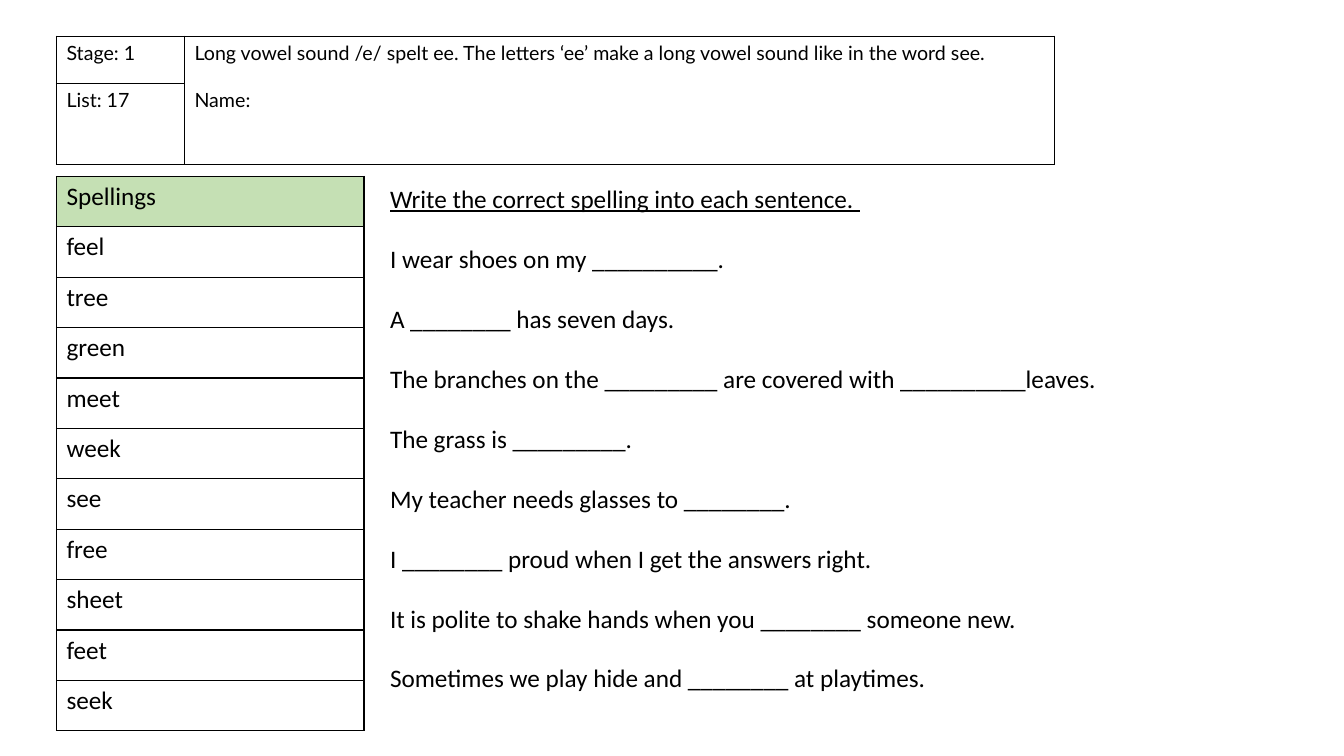
from dataclasses import dataclass

from lxml import etree
from pptx import Presentation
from pptx.dml.color import RGBColor
from pptx.enum.text import MSO_AUTO_SIZE
from pptx.oxml import parse_xml
from pptx.oxml.ns import nsdecls
from pptx.slide import Slide
from pptx.table import Table, _Cell
from pptx.text.text import TextFrame
from pptx.util import Inches, Pt


@dataclass(frozen=True)
class Style:
    font: str
    size: float
    gap: float  # points between paragraphs


@dataclass(frozen=True)
class Theme:
    ink: str = "000000"
    green: str = "C5E0B4"
    rule: int = 12700
    head: Style = Style("Lato", 14, 16.8)
    body: Style = Style("Calibri", 18, 21.2)


@dataclass(frozen=True)
class Grid:
    left: float
    top: float
    cols: tuple[float, ...]
    row: float
    cells: tuple[tuple[tuple[str, ...], ...], ...]
    style: Style


THEME = Theme()

HEAD = Grid(
    0.56, 0.36, (1.27, 8.63), 0.47,
    (
        (
            ("Stage: 1",),
            (
                "Long vowel sound /e/ spelt ee. The letters ‘ee’ make a "
                "long vowel sound like in the word see.",
                "Name:",
            ),
        ),
        (("List: 17",), ()),
    ),
    THEME.head,
)

WORDS = ("Spellings", "feel", "tree", "green", "meet", "week", "see",
         "free", "sheet", "feet", "seek")
LIST = Grid(0.56, 1.75, (3.05,), 0.5,
            tuple(((word,),) for word in WORDS), THEME.body)

TASK = (
    "Write the correct spelling into each sentence. ",
    "I wear shoes on my __________.",
    "A ________ has seven days.",
    "The branches on the _________ are covered with __________leaves.",
    "The grass is _________.",
    "My teacher needs glasses to ________.",
    "I ________ proud when I get the answers right.",
    "It is polite to shake hands when you ________ someone new.",
    "Sometimes we play hide and ________ at playtimes.",
)


def write(frame: TextFrame, lines: tuple[str, ...], style: Style) -> None:
    for i, line in enumerate(lines):
        para = frame.add_paragraph() if i else frame.paragraphs[0]
        if i:
            para.space_before = Pt(style.gap)
        run = para.add_run()
        run.text = line
        run.font.name = style.font
        run.font.size = Pt(style.size)
        run.font.color.rgb = RGBColor.from_string(THEME.ink)


def frame_cell(cell: _Cell) -> None:
    """Rule all four sides of a cell."""
    props: etree._Element = cell._tc.get_or_add_tcPr()
    for i, side in enumerate("LRTB"):
        props.insert(i, parse_xml(
            f'<a:ln{side} {nsdecls("a")} w="{THEME.rule}"><a:solidFill>'
            f'<a:srgbClr val="{THEME.ink}"/></a:solidFill></a:ln{side}>'))


def add_grid(slide: Slide, grid: Grid) -> Table:
    count = len(grid.cells)
    table = slide.shapes.add_table(
        count, len(grid.cols), Inches(grid.left), Inches(grid.top),
        Inches(sum(grid.cols)), Inches(grid.row * count)).table
    table.first_row = table.horz_banding = False
    for col, width in zip(table.columns, grid.cols):
        col.width = Inches(width)
    for r, row in enumerate(grid.cells):
        table.rows[r].height = Inches(grid.row)
        for c, lines in enumerate(row):
            cell = table.cell(r, c)
            cell.fill.background()
            frame_cell(cell)
            write(cell.text_frame, lines, grid.style)
    return table


def add_task(slide: Slide) -> None:
    box = slide.shapes.add_textbox(
        Inches(3.77), Inches(1.77), Inches(9.5), Inches(5.7))
    frame = box.text_frame
    frame.word_wrap = True
    frame.auto_size = MSO_AUTO_SIZE.NONE
    write(frame, TASK, THEME.body)
    frame.paragraphs[0].runs[0].font.underline = True


def main() -> None:
    deck = Presentation()
    deck.slide_width, deck.slide_height = Inches(13.33), Inches(7.5)
    slide = deck.slides.add_slide(deck.slide_layouts[6])

    # Spelling list with a green heading
    words = add_grid(slide, LIST)
    fill = words.cell(0, 0).fill
    fill.solid()
    fill.fore_color.rgb = RGBColor.from_string(THEME.green)

    # Stage, list and name, with the right column merged
    head = add_grid(slide, HEAD)
    head.cell(0, 1).merge(head.cell(1, 1))

    # Sentences to complete
    add_task(slide)
    deck.save("out.pptx")


if __name__ == "__main__":
    main()
